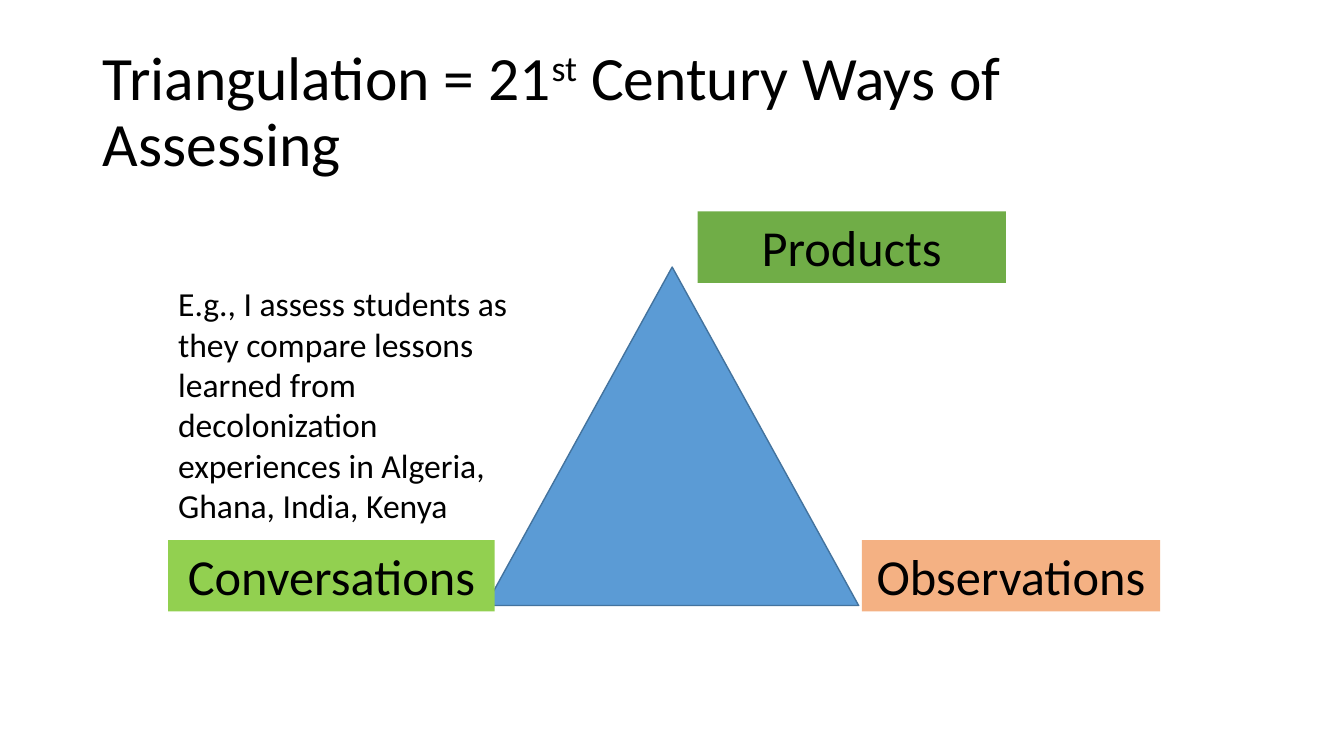
import pptx
import pptx.util
import pptx.dml.color
import pptx.enum.shapes
import pptx.enum.text

Cm = pptx.util.Cm
Kind = pptx.enum.shapes.MSO_SHAPE
Align = pptx.enum.text.PP_ALIGN
Anchor = pptx.enum.text.MSO_ANCHOR

# Content: title pieces carry a baseline shift in percent
TITLE = [("Triangulation = 21", 0), ("st", 30), (" Century Ways of Assessing", 0)]
NOTE = [("E.g., I assess students as they compare lessons learned from "
         "decolonization experiences in Algeria, Ghana, India, Kenya", 0)]
# Label, left, top, width (cm), theme fill
LABELS = [
    ("Products", 17.58, 5.33, 7.77, "green"),
    ("Observations", 21.72, 13.61, 7.52, "peach"),
    ("Conversations", 4.24, 13.61, 8.23, "lime"),
]
LABEL_HIGH = 1.8

THEME = {
    "font": "Calibri", "ink": "000000",
    "blue": "5B9BD5", "edge": "43739E",
    "green": "70AD47", "peach": "F4B183", "lime": "92D050",
    "title": 44, "label": 36, "note": 24,
}


def color(name):
    return pptx.dml.color.RGBColor.from_string(THEME[name])


def place(shape, left, top, width, height):
    shape.left, shape.top = Cm(left), Cm(top)
    shape.width, shape.height = Cm(width), Cm(height)


def write(shape, parts, size, align=Align.LEFT, anchor=Anchor.TOP, space=1.0):
    frame = shape.text_frame
    frame.word_wrap = True
    frame.auto_size = pptx.enum.text.MSO_AUTO_SIZE.NONE
    frame.vertical_anchor = anchor
    para = frame.paragraphs[0]
    para.alignment = align
    para.line_spacing = space
    for text, shift in parts:
        run = para.add_run()
        run.text = text
        run.font.name = THEME["font"]
        run.font.size = pptx.util.Pt(THEME[size])
        run.font.color.rgb = color("ink")
        if shift:
            run.font._element.set("baseline", str(shift * 1000))


def draw(slide, kind, box, fill, edge=None):
    shape = slide.shapes.add_shape(kind, *map(Cm, box))
    shape.shadow.inherit = False
    shape.fill.solid()
    shape.fill.fore_color.rgb = color(fill)
    if edge:
        shape.line.color.rgb = color(edge)
        shape.line.width = pptx.util.Pt(1)
    else:
        shape.line.fill.background()
    return shape


def main():
    deck = pptx.Presentation()
    deck.slide_width, deck.slide_height = Cm(33.87), Cm(19.05)
    slide = deck.slides.add_slide(deck.slide_layouts[5])

    # Title
    title = slide.shapes.title
    place(title, 2.34, 1.02, 29.21, 3.68)
    write(title, TITLE, "title", anchor=Anchor.MIDDLE, space=0.9)

    # Triangle with a label at each corner
    draw(slide, Kind.ISOSCELES_TRIANGLE, (12.24, 6.73, 9.4, 8.53), "blue", "edge")
    for text, left, top, width, fill in LABELS:
        label = draw(slide, Kind.RECTANGLE, (left, top, width, LABEL_HIGH), fill)
        write(label, [(text, 0)], "label", align=Align.CENTER)

    # Example
    note = slide.shapes.add_textbox(Cm(4.24), Cm(7.01), Cm(9.07), Cm(6.4))
    write(note, NOTE, "note")

    deck.save("out.pptx")


if __name__ == "__main__":
    main()
